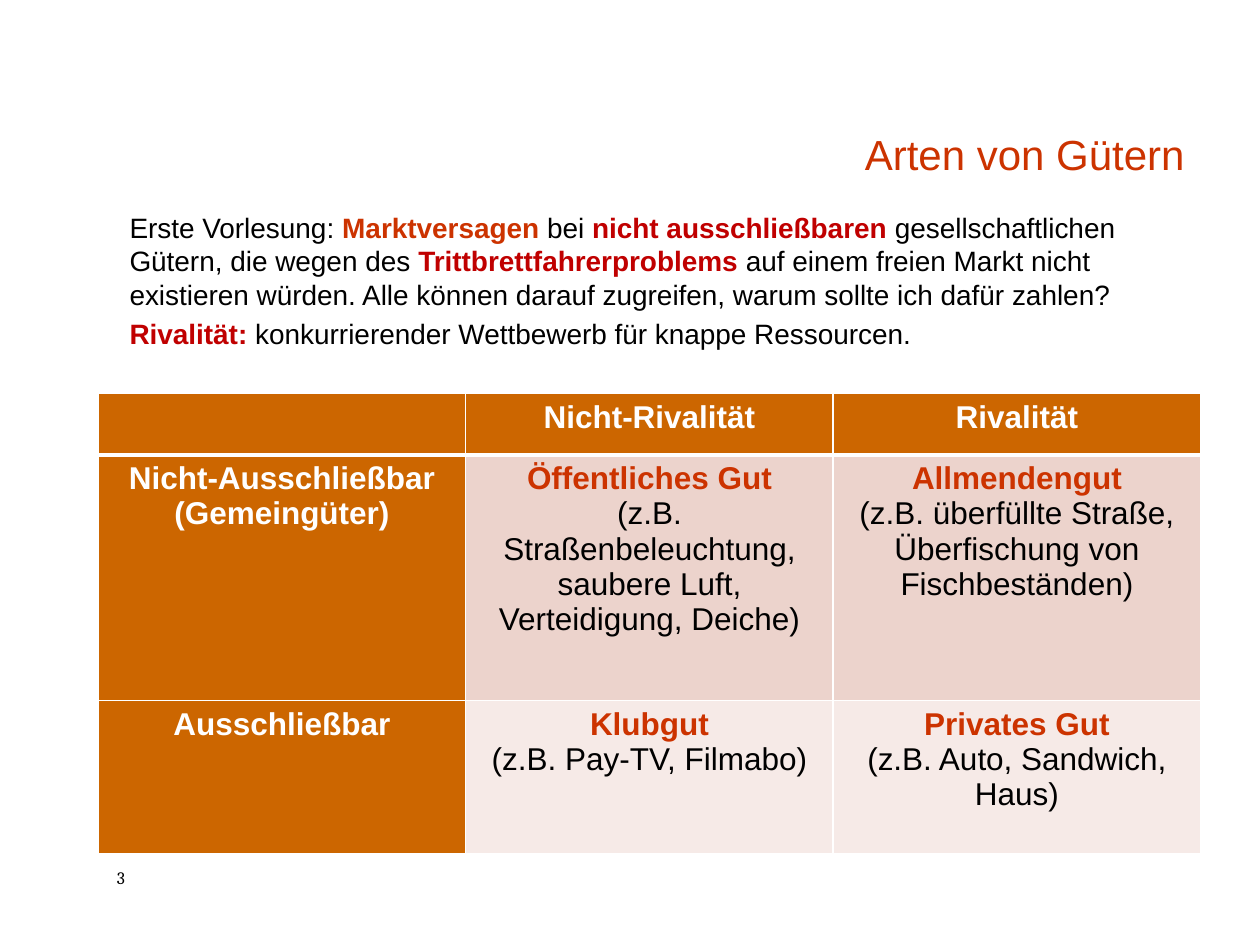
import pptx
import pptx.util
import pptx.dml.color
import pptx.enum.text
import pptx.oxml
import pptx.oxml.ns
from pptx.util import Inches

ALIGN = pptx.enum.text.PP_ALIGN
ANCHOR = pptx.enum.text.MSO_ANCHOR
ACCENT, DARK_RED, BLACK, WHITE = "CC3300", "C00000", "000000", "FFFFFF"
HEADER, BAND_1, BAND_2 = "CC6600", "ECD3CC", "F6EAE7"


def color(hex_code):
    return pptx.dml.color.RGBColor.from_string(hex_code)


def write(tf, paragraphs, size, font="Arial", align=ALIGN.LEFT,
          space_before=0, line_spacing=None):
    """Fill a text frame; each paragraph is a list of (text, colour, bold)."""
    tf.word_wrap = True
    for i, runs in enumerate(paragraphs):
        p = tf.paragraphs[0] if i == 0 else tf.add_paragraph()
        p.alignment = align
        p.space_before = pptx.util.Pt(space_before if i else 0)
        if line_spacing:
            p.line_spacing = line_spacing
        for text, hex_code, bold in runs:
            r = p.add_run()
            r.text = text
            r.font.name = font
            r.font.size = pptx.util.Pt(size)
            r.font.bold = bold
            r.font.color.rgb = color(hex_code)


def add_text(s, box, paragraphs, size, anchor=ANCHOR.TOP, **text_format):
    tf = s.shapes.add_textbox(*map(Inches, box)).text_frame
    tf.vertical_anchor = anchor
    write(tf, paragraphs, size, **text_format)


def set_borders(cell, bottom=0.96):
    tc_pr = cell._tc.get_or_add_tcPr()
    widths = {"L": 0.96, "R": 0.96, "T": 0.96, "B": bottom}
    for i, (side, width) in enumerate(widths.items()):
        ln = pptx.oxml.parse_xml(
            f'<a:ln{side} {pptx.oxml.ns.nsdecls("a")} w="{pptx.util.Pt(width)}">'
            f'<a:solidFill><a:srgbClr val="{WHITE}"/></a:solidFill></a:ln{side}>')
        tc_pr.insert(i, ln)


def add_title(s, box):
    add_text(s, box, [[("Arten von Gütern", ACCENT, False)]], 24,
             anchor=ANCHOR.BOTTOM, align=ALIGN.RIGHT, line_spacing=0.9)


def add_intro(s, box):
    add_text(s, box, [
        [("Erste Vorlesung: ", BLACK, False),
         ("Marktversagen", ACCENT, True),
         (" bei ", BLACK, False),
         ("nicht ausschließbaren ", DARK_RED, True),
         ("gesellschaftlichen Gütern, die wegen des ", BLACK, False),
         ("Trittbrettfahrerproblems", DARK_RED, True),
         (" auf einem freien Markt nicht existieren würden. Alle können "
          "darauf zugreifen, warum sollte ich dafür zahlen?", BLACK, False)],
        [("Rivalität: ", DARK_RED, True),
         ("konkurrierender Wettbewerb für knappe Ressourcen.", BLACK, False)],
    ], 16, space_before=3.2)


def add_goods_table(s, box):
    def heading(*lines):
        return [[(line, WHITE, True)] for line in lines]

    def good(name, *examples):
        return [[(name, ACCENT, True)]] + [[(e, BLACK, False)] for e in examples]

    rows = [
        (0.49, HEADER, [[], heading("Nicht-Rivalität"), heading("Rivalität")]),
        (1.95, BAND_1, [
            heading("Nicht-Ausschließbar", "(Gemeingüter)"),
            good("Öffentliches Gut", "(z.B.",
                 "Straßenbeleuchtung, saubere Luft, Verteidigung, Deiche)"),
            good("Allmendengut",
                 "(z.B. überfüllte Straße, Überfischung von Fischbeständen)")]),
        (1.22, BAND_2, [
            heading("Ausschließbar"),
            good("Klubgut", "(z.B. Pay-TV, Filmabo)"),
            good("Privates Gut", "(z.B. Auto, Sandwich, Haus)")]),
    ]
    table = s.shapes.add_table(3, 3, *map(Inches, box)).table
    for column in table.columns:
        column.width = Inches(box[2] / 3)
    for i, (height, band, contents) in enumerate(rows):
        table.rows[i].height = Inches(height)
        for j, paragraphs in enumerate(contents):
            cell = table.cell(i, j)
            cell.fill.solid()
            cell.fill.fore_color.rgb = color(HEADER if j == 0 else band)
            set_borders(cell, bottom=3 if i == 0 else 0.96)
            write(cell.text_frame, paragraphs, 18, align=ALIGN.CENTER)


def add_page_number(s, box):
    add_text(s, box, [[("3", BLACK, False)]], 10, font="Cambria")


def main():
    prs = pptx.Presentation()
    prs.slide_width, prs.slide_height = Inches(10), Inches(7.5)
    s = prs.slides.add_slide(prs.slide_layouts[6])
    add_page_number(s, (0.83, 6.83, 0.67, 0.29))
    add_title(s, (2.09, 0.42, 7.41, 1.05))
    add_intro(s, (0.93, 1.62, 8.13, 1.26))
    add_goods_table(s, (0.78, 3.12, 8.75, 3.66))
    prs.save("out.pptx")


if __name__ == "__main__":
    main()
